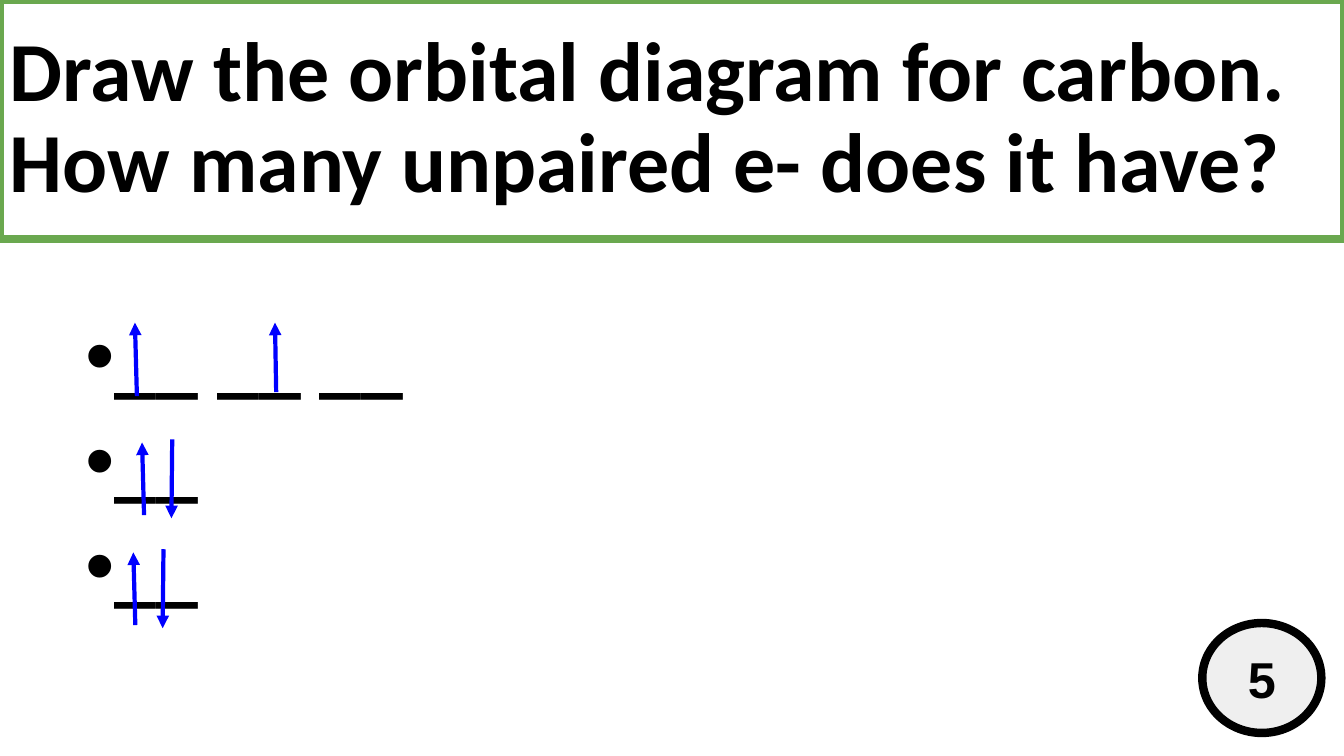
from dataclasses import dataclass

from lxml.etree import SubElement
from pptx import Presentation
from pptx.dml.color import RGBColor
from pptx.enum.shapes import MSO_CONNECTOR, MSO_SHAPE
from pptx.enum.text import MSO_ANCHOR, MSO_AUTO_SIZE, PP_ALIGN
from pptx.oxml.ns import qn
from pptx.util import Cm, Pt

TITLE = "Draw the orbital diagram for carbon. How many unpaired e- does it have?"
ORBITAL = "__"
ORBITAL_COUNTS = [3, 1, 1]  # 2p, 2s, 1s from top to bottom
GAP = " "  # one en space
NUMBER = "5"

# Electron arrows in cm: (tail x, tail y, head x, head y)
ELECTRONS_2P = [(3.45, 9.98, 3.4, 8.13), (6.96, 9.88, 6.93, 8.13)]
PAIR = [(0, 1.91, -0.05, 0.08), (0.71, 0, 0.69, 1.99)]
PAIR_ORIGINS = [(3.63, 11.07), (3.41, 13.84)]  # 2s, 1s


@dataclass(frozen=True)
class Theme:
    ink = RGBColor(0x00, 0x00, 0x00)
    frame = RGBColor(0x6A, 0xA8, 0x4F)
    electron = RGBColor(0x00, 0x00, 0xFF)
    badge = RGBColor(0xEF, 0xEF, 0xEF)
    text_font = "Calibri"
    badge_font = "Arial"
    text_size = Pt(60)
    badge_size = Pt(36)
    border = Pt(6)
    arrow = Pt(3)


THEME = Theme()


def place(sp, left, top, width, height):
    sp.left, sp.top, sp.width, sp.height = map(Cm, (left, top, width, height))


def set_frame(tf, anchor, inset_y):
    tf.word_wrap = True
    tf.auto_size = MSO_AUTO_SIZE.NONE
    tf.vertical_anchor = anchor
    tf.margin_left = tf.margin_right = Cm(0.25)
    tf.margin_top = tf.margin_bottom = Cm(inset_y)


def format_text(p, font, size, align):
    p.font.name, p.font.size = font, size
    p.font.bold = True
    p.font.color.rgb = THEME.ink
    p.alignment = align


def set_border(sp, color):
    sp.line.color.rgb = color
    sp.line.width = THEME.border


def add_title(slide):
    sp = slide.shapes.title
    place(sp, 0, 0, 33.87, 6.02)
    set_border(sp, THEME.frame)
    set_frame(sp.text_frame, MSO_ANCHOR.MIDDLE, 0.13)
    p = sp.text_frame.paragraphs[0]
    p.text = TITLE
    p.line_spacing = 0.9
    format_text(p, THEME.text_font, THEME.text_size, PP_ALIGN.LEFT)


def add_orbitals(slide):
    sp = slide.placeholders[1]
    place(sp, 1.9, 7.82, 28.88, 7.11)
    tf = sp.text_frame
    set_frame(tf, MSO_ANCHOR.TOP, 0.13)
    for i, count in enumerate(ORBITAL_COUNTS):
        p = tf.add_paragraph() if i else tf.paragraphs[0]
        p.text = GAP.join([ORBITAL] * count)
        p.line_spacing = 0.9
        p.space_before = Pt(10 if i else 0)
        format_text(p, THEME.text_font, THEME.text_size, PP_ALIGN.LEFT)
        pPr = p._p.get_or_add_pPr()
        pPr.set("marL", str(Cm(0.64)))
        pPr.set("indent", str(Cm(-1.12)))


def add_electron(slide, x1, y1, x2, y2):
    cx = slide.shapes.add_connector(MSO_CONNECTOR.STRAIGHT, Cm(x1), Cm(y1), Cm(x2), Cm(y2))
    cx.line.color.rgb = THEME.electron
    cx.line.width = THEME.arrow
    SubElement(cx.line._get_or_add_ln(), qn("a:tailEnd"), type="triangle")
    SubElement(cx._element.spPr, qn("a:effectLst"))


def add_badge(slide):
    sp = slide.shapes.add_shape(MSO_SHAPE.OVAL, Cm(30.3), Cm(15.7), Cm(3), Cm(2.77))
    sp.shadow.inherit = False
    sp.fill.solid()
    sp.fill.fore_color.rgb = THEME.badge
    set_border(sp, THEME.ink)
    set_frame(sp.text_frame, MSO_ANCHOR.MIDDLE, 0.25)
    p = sp.text_frame.paragraphs[0]
    p.text = NUMBER
    format_text(p, THEME.badge_font, THEME.badge_size, PP_ALIGN.CENTER)


def main():
    prs = Presentation()
    prs.slide_width, prs.slide_height = Cm(33.87), Cm(19.05)
    slide = prs.slides.add_slide(prs.slide_layouts[1])
    add_title(slide)
    add_orbitals(slide)
    for x, y in PAIR_ORIGINS:
        for x1, y1, x2, y2 in PAIR:
            add_electron(slide, x + x1, y + y1, x + x2, y + y2)
    for electron in ELECTRONS_2P:
        add_electron(slide, *electron)
    add_badge(slide)
    prs.save("out.pptx")


if __name__ == "__main__":
    main()
